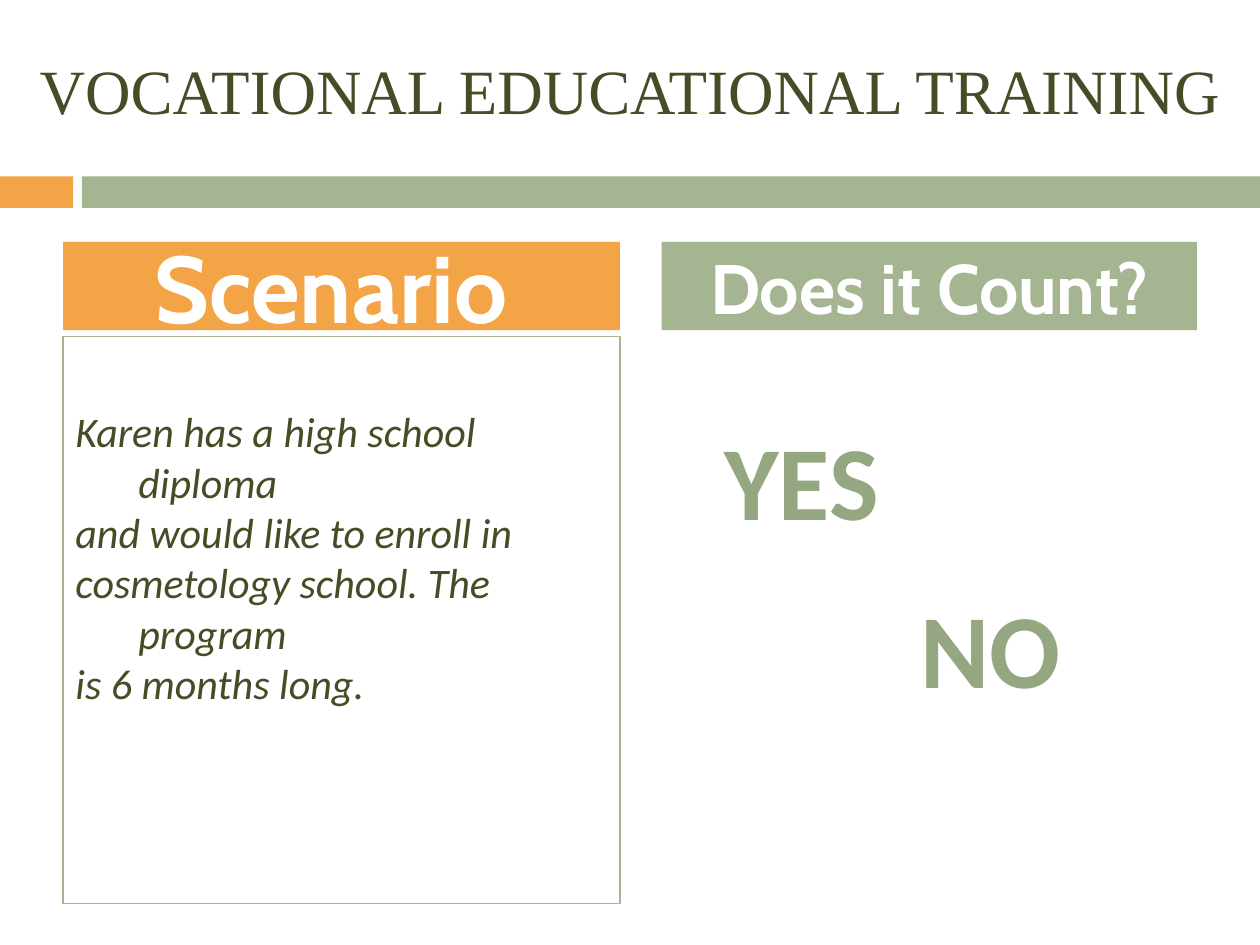
from pptx import Presentation
from pptx.dml.color import RGBColor
from pptx.enum.shapes import MSO_SHAPE
from pptx.enum.text import MSO_ANCHOR, PP_ALIGN
from pptx.util import Inches, Pt

RECT = MSO_SHAPE.RECTANGLE
TOP, MIDDLE = MSO_ANCHOR.TOP, MSO_ANCHOR.MIDDLE
LEFT, CENTER = PP_ALIGN.LEFT, PP_ALIGN.CENTER

ORANGE = RGBColor(0xF3, 0xA4, 0x47)
SAGE = RGBColor(0xA5, 0xB5, 0x92)
ANSWER_GREEN = RGBColor(0x95, 0xA7, 0x80)
OLIVE = RGBColor(0x44, 0x4D, 0x26)
WHITE = RGBColor(0xFF, 0xFF, 0xFF)

SLIDE_W, SLIDE_H = 10, 7.5


def add_box(s, box, fill=None, line=None):
    """Add a rectangle; box is left, top, width, height in inches."""
    sp = s.shapes.add_shape(RECT, *map(Inches, box))
    sp.shadow.inherit = False
    if fill is None:
        sp.fill.background()
    else:
        sp.fill.solid()
        sp.fill.fore_color.rgb = fill
    if line is None:
        sp.line.fill.background()
    else:
        sp.line.color.rgb = line
        sp.line.width = Pt(0.75)
    return sp


def write(sp, text, size, font, color, bold=False, italic=False, align=CENTER,
          anchor=MIDDLE, before=0, hanging=0, top_inset=0.05):
    """Fill a shape with text, one paragraph per line of the string."""
    tf = sp.text_frame
    tf.word_wrap = True
    tf.vertical_anchor = anchor
    tf.margin_top = Inches(top_inset)
    for i, line in enumerate(text.split("\n")):
        p = tf.add_paragraph() if i else tf.paragraphs[0]
        p.alignment = align
        p.space_before = Pt(before)
        if hanging:
            pPr = p._p.get_or_add_pPr()
            pPr.set("marL", str(Inches(hanging)))
            pPr.set("indent", str(-Inches(hanging)))
        r = p.add_run()
        r.text = line
        r.font.size = Pt(size)
        r.font.name = font
        r.font.bold = bold
        r.font.italic = italic
        r.font.color.rgb = color


def add_text(s, box, text, **style):
    write(s.shapes.add_textbox(*map(Inches, box)), text, **style)


def add_title(s, box):
    # Title above a two-colour band
    x, y, w, h = box
    band_h, accent_w, gap = 0.25, 0.58, 0.07
    band_y = y + h - band_h
    bar_x = x + accent_w + gap
    add_box(s, (x, band_y, accent_w, band_h), fill=ORANGE)
    add_box(s, (bar_x, band_y, x + w - bar_x, band_h), fill=SAGE)
    add_text(s, (x, y, w, 1.42), "VOCATIONAL EDUCATIONAL TRAINING",
             size=36, font="Times New Roman", color=OLIVE)


def add_header(s, box, text, fill, size):
    write(add_box(s, box, fill=fill), text, size=size, font="Cabin",
          color=WHITE, bold=True, before=7)


def add_scenario(s, box):
    # Header with an outlined case description below
    x, y, w, h = box
    header_h, gap = 0.7, 0.05
    add_header(s, (x, y, w, header_h), "Scenario ", ORANGE, 54)
    body_y = header_h + gap
    body = add_box(s, (x, y + body_y, w, h - body_y), line=SAGE)
    write(body, "Karen has a high school diploma\n"
                "and would like to enroll in\n"
                "cosmetology school. The program\n"
                "is 6 months long.",
          size=24, font="Calibri", color=OLIVE, italic=True, align=LEFT,
          anchor=TOP, hanging=0.5, top_inset=0.55)


def add_answers(s, box):
    # Header with two staggered answers below
    x, y, w, _ = box
    add_header(s, (x, y, w, 0.7), "Does it Count?", SAGE, 40)
    for i, answer in enumerate(("YES ", "NO ")):
        add_text(s, (x + 0.08 + 1.5 * i, y + 1.33 * (i + 1), 2.25, 1.11),
                 answer, size=60, font="Calibri", color=ANSWER_GREEN,
                 bold=True, anchor=TOP)


def main():
    prs = Presentation()
    prs.slide_width, prs.slide_height = Inches(SLIDE_W), Inches(SLIDE_H)
    s = prs.slides.add_slide(prs.slide_layouts[6])

    margin, top, column_h = 0.05 * SLIDE_W, 1.92, 0.7 * SLIDE_H
    left_w, right_w = 4.42, 4.25
    add_title(s, (0, 0, SLIDE_W, 0.22 * SLIDE_H))
    add_scenario(s, (margin, top, left_w, column_h))
    add_answers(s, (SLIDE_W - margin - right_w, top, right_w, column_h))
    prs.save("out.pptx")


if __name__ == "__main__":
    main()
